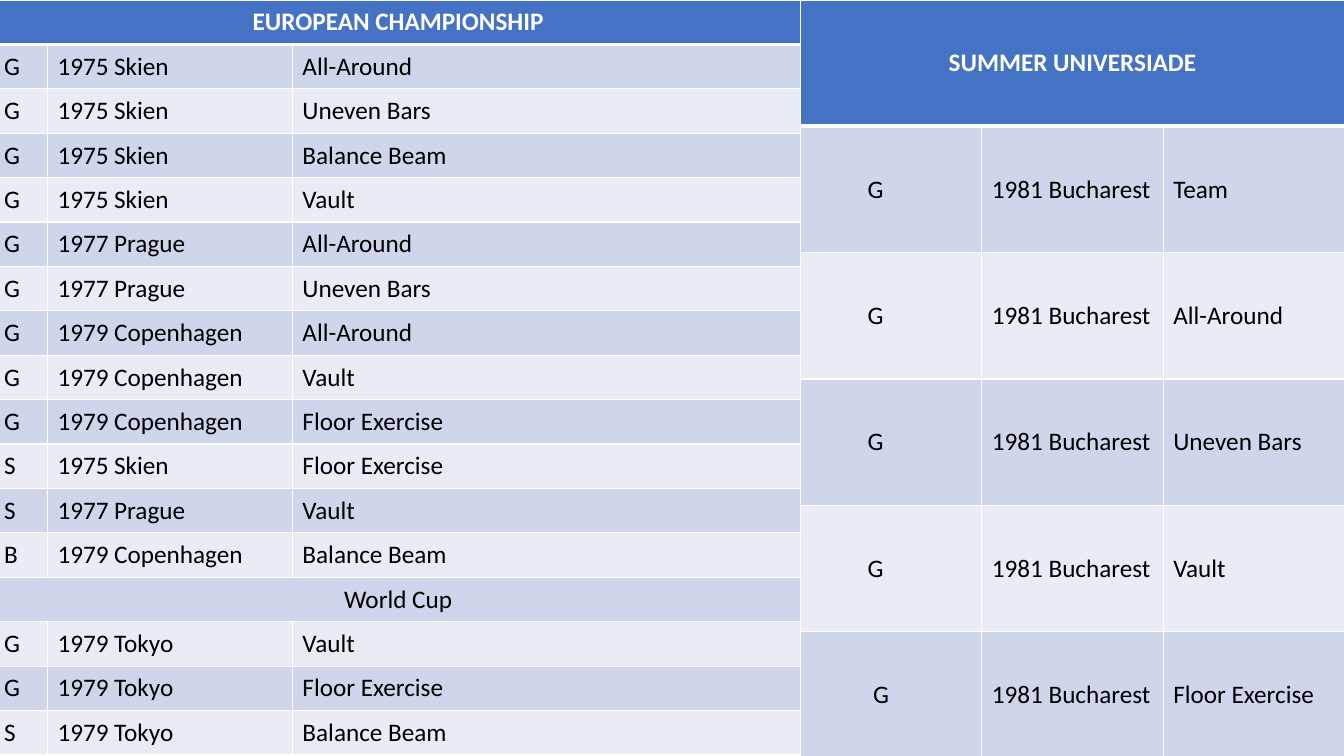
"""Build a slide with two medal tables side by side."""
from dataclasses import dataclass

from lxml import etree
from pptx import Presentation
from pptx.dml.color import RGBColor
from pptx.enum import text
from pptx.oxml import ns
from pptx.util import Pt

FONT = "Calibri"
WHITE, BLACK = "FFFFFF", "000000"
HEADER_FILL = "4472C4"
BAND_FILLS = ("E9EBF5", "CFD5EA")
MARGIN = 7.2
THIN, THICK = 1, 3


@dataclass(frozen=True)
class MedalRow:
    """One result: medal, event and apparatus."""
    medal: str
    event: str
    apparatus: str
    indent: float = MARGIN

    def texts(self) -> list[str]:
        return [self.medal, self.event, self.apparatus]


@dataclass(frozen=True)
class Heading:
    """A title that spans all columns."""
    title: str

    def texts(self) -> list[str]:
        return [self.title]


@dataclass(frozen=True)
class MedalTable:
    """A table with its place, column widths and rows."""
    left: float
    columns: tuple[float, ...]
    row_height: float
    rows: list[Heading | MedalRow]


EUROPEAN = MedalTable(-4.3, (38.2, 175, 364.3), 31.72, [
    Heading("EUROPEAN CHAMPIONSHIP"),
    MedalRow("G", "1975 Skien", "All-Around"),
    MedalRow("G", "1975 Skien", "Uneven Bars"),
    MedalRow("G", "1975 Skien", "Balance Beam"),
    MedalRow("G", "1975 Skien", "Vault"),
    MedalRow("G", "1977 Prague", "All-Around"),
    MedalRow("G", "1977 Prague", "Uneven Bars"),
    MedalRow("G", "1979 Copenhagen", "All-Around"),
    MedalRow("G", "1979 Copenhagen", "Vault"),
    MedalRow("G", "1979 Copenhagen", "Floor Exercise"),
    MedalRow("S", "1975 Skien", "Floor Exercise"),
    MedalRow("S", "1977 Prague", "Vault"),
    MedalRow("B", "1979 Copenhagen", "Balance Beam"),
    Heading("World Cup"),
    MedalRow("G", "1979 Tokyo", "Vault"),
    MedalRow("G", "1979 Tokyo", "Floor Exercise"),
    MedalRow("S", "1979 Tokyo", "Balance Beam"),
])

UNIVERSIADE = MedalTable(571.7, (129.6, 129.6, 129.6), 90.24, [
    Heading("SUMMER UNIVERSIADE"),
    MedalRow("G", "1981 Bucharest", "Team", 48),
    MedalRow("G", "1981 Bucharest", "All-Around", 48),
    MedalRow("G", "1981 Bucharest", "Uneven Bars", 48),
    MedalRow("G", "1981 Bucharest", "Vault", 48),
    MedalRow("G", "1981 Bucharest", "Floor Exercise", 52),
])


def color(value: str) -> RGBColor:
    return RGBColor.from_string(value)


def set_borders(cell, top: float, bottom: float) -> None:
    properties = cell._tc.get_or_add_tcPr()
    widths = {"lnL": THIN, "lnR": THIN, "lnT": top, "lnB": bottom}
    for position, (side, width) in enumerate(widths.items()):
        line = etree.Element(ns.qn(f"a:{side}"), w=str(Pt(width)))
        fill = etree.SubElement(line, ns.qn("a:solidFill"))
        etree.SubElement(fill, ns.qn("a:srgbClr"), val=WHITE)
        properties.insert(position, line)


def style_cell(cell, row_index: int) -> None:
    is_header = row_index == 0
    cell.fill.solid()
    cell.fill.fore_color.rgb = color(HEADER_FILL if is_header else BAND_FILLS[row_index % 2])
    cell.vertical_anchor = text.MSO_ANCHOR.MIDDLE
    set_borders(cell, THICK if row_index == 1 else THIN, THICK if is_header else THIN)


def write_cell(cell, words: str, is_header: bool, centered: bool) -> None:
    cell.text_frame.text = words
    para = cell.text_frame.paragraphs[0]
    para.alignment = text.PP_ALIGN.CENTER if centered else text.PP_ALIGN.LEFT
    for span in para.runs:
        span.font.name = FONT
        span.font.size = Pt(18)
        span.font.bold = is_header
        span.font.color.rgb = color(WHITE if is_header else BLACK)


def draw_table(page, data: MedalTable) -> None:
    frame = page.shapes.add_table(
        len(data.rows), len(data.columns), Pt(data.left), Pt(0),
        Pt(sum(data.columns)), Pt(data.row_height * len(data.rows)))
    table = frame.table
    for column, width in zip(table.columns, data.columns):
        column.width = Pt(width)
    for row_index, entry in enumerate(data.rows):
        row = table.rows[row_index]
        row.height = Pt(data.row_height)
        cells = list(row.cells)
        for cell in cells:
            style_cell(cell, row_index)
        is_heading = isinstance(entry, Heading)
        if is_heading:
            cells[0].merge(cells[-1])
        else:
            cells[0].margin_left = Pt(entry.indent)
        for cell, words in zip(cells, entry.texts()):
            write_cell(cell, words, row_index == 0, is_heading)


def main() -> None:
    deck = Presentation()
    deck.slide_width, deck.slide_height = Pt(960), Pt(540)
    page = deck.slides.add_slide(deck.slide_layouts[6])
    for data in (EUROPEAN, UNIVERSIADE):
        draw_table(page, data)
    deck.save("out.pptx")


if __name__ == "__main__":
    main()
